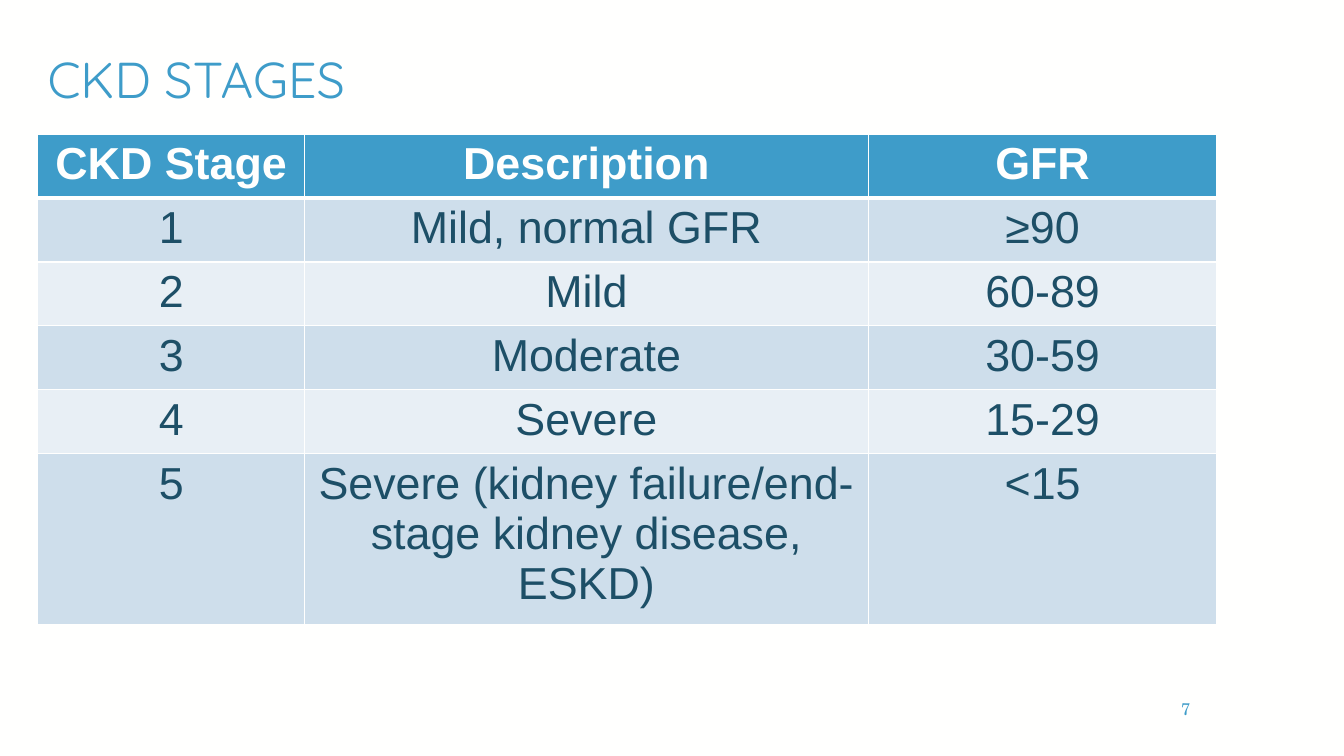
import pptx
import pptx.dml.color
import pptx.enum.text
import pptx.oxml
import pptx.oxml.ns
import pptx.util
from pptx.util import Cm

BLUE = "3E9CC9"
DARK = "1D4F67"
WHITE = "FFFFFE"
BANDS = ["CEDEEB", "E8EFF5"]
ALIGN = pptx.enum.text.PP_ALIGN

STAGES = [
    ("CKD Stage", "Description", "GFR"),
    ("1", "Mild, normal GFR", "≥90"),
    ("2", "Mild", "60-89"),
    ("3", "Moderate", "30-59"),
    ("4", "Severe", "15-29"),
    ("5", "Severe (kidney failure/end-stage kidney disease, ESKD)", "<15"),
]


def color(value):
    return pptx.dml.color.RGBColor.from_string(value)


def style(paragraph, font_name, size, value, align, bold=False):
    paragraph.alignment = align
    paragraph.font.name = font_name
    paragraph.font.size = pptx.util.Pt(size)
    paragraph.font.bold = bold
    paragraph.font.color.rgb = color(value)


def add_text(slide, box, text, font_name, size, align):
    frame = slide.shapes.add_textbox(*box).text_frame
    frame.word_wrap = True
    frame.vertical_anchor = pptx.enum.text.MSO_ANCHOR.MIDDLE
    paragraph = frame.paragraphs[0]
    paragraph.text = text
    paragraph.line_spacing = 0.9 if size > 20 else 1.0
    style(paragraph, font_name, size, BLUE, align)


def set_borders(cell, widths):
    """Draw the cell's borders; widths maps L, R, T, B to points."""
    properties = cell._tc.get_or_add_tcPr()
    for position, (side, width) in enumerate(widths.items()):
        line = pptx.oxml.parse_xml(
            f'<a:ln{side} {pptx.oxml.ns.nsdecls("a")} w="{pptx.util.Pt(width)}">'
            f'<a:solidFill><a:srgbClr val="{WHITE}"/></a:solidFill></a:ln{side}>')
        properties.insert(position, line)


def add_stage_table(slide, box):
    left, top, width, height = box
    table = slide.shapes.add_table(len(STAGES), 3, left, top, width, height).table

    # Column widths and row heights
    table.columns[0].width = Cm(6.73)
    table.columns[1].width = Cm(14.2)
    table.columns[2].width = width - Cm(6.73) - Cm(14.2)
    for row in table.rows:
        row.height = Cm(1.5)
    table.rows[len(STAGES) - 1].height = Cm(4)

    # Header and banded cells
    for row_index, texts in enumerate(STAGES):
        header = row_index == 0
        for column_index, text in enumerate(texts):
            cell = table.cell(row_index, column_index)
            cell.fill.solid()
            cell.fill.fore_color.rgb = color(BLUE if header else BANDS[(row_index - 1) % 2])
            set_borders(cell, {"L": 1, "R": 1, "T": 3 if row_index == 1 else 1,
                               "B": 3 if header else 1})
            paragraph = cell.text_frame.paragraphs[0]
            paragraph.text = text
            style(paragraph, "Arial", 32, WHITE if header else DARK, ALIGN.CENTER, header)


def build_stages_slide(presentation):
    slide = presentation.slides.add_slide(presentation.slide_layouts[6])
    slide.background.fill.solid()
    slide.background.fill.fore_color.rgb = color(WHITE)

    # Title, table and page number
    left, width = Cm(0.95), Cm(29.72)
    title_top, title_height = Cm(0.76), Cm(2.62)
    add_text(slide, (left, title_top, width, title_height),
             "CKD STAGES", "Quicksand", 36, ALIGN.LEFT)
    add_stage_table(slide, (left, title_top + title_height, width, Cm(11.5)))
    add_text(slide, (Cm(29.11), Cm(17.35), Cm(1.14), Cm(1.02)),
             "7", "TeX Gyre Schola", 12, ALIGN.RIGHT)


def main():
    presentation = pptx.Presentation()
    presentation.slide_width = Cm(33.87)
    presentation.slide_height = Cm(19.05)
    build_stages_slide(presentation)
    presentation.save("out.pptx")


if __name__ == "__main__":
    main()
